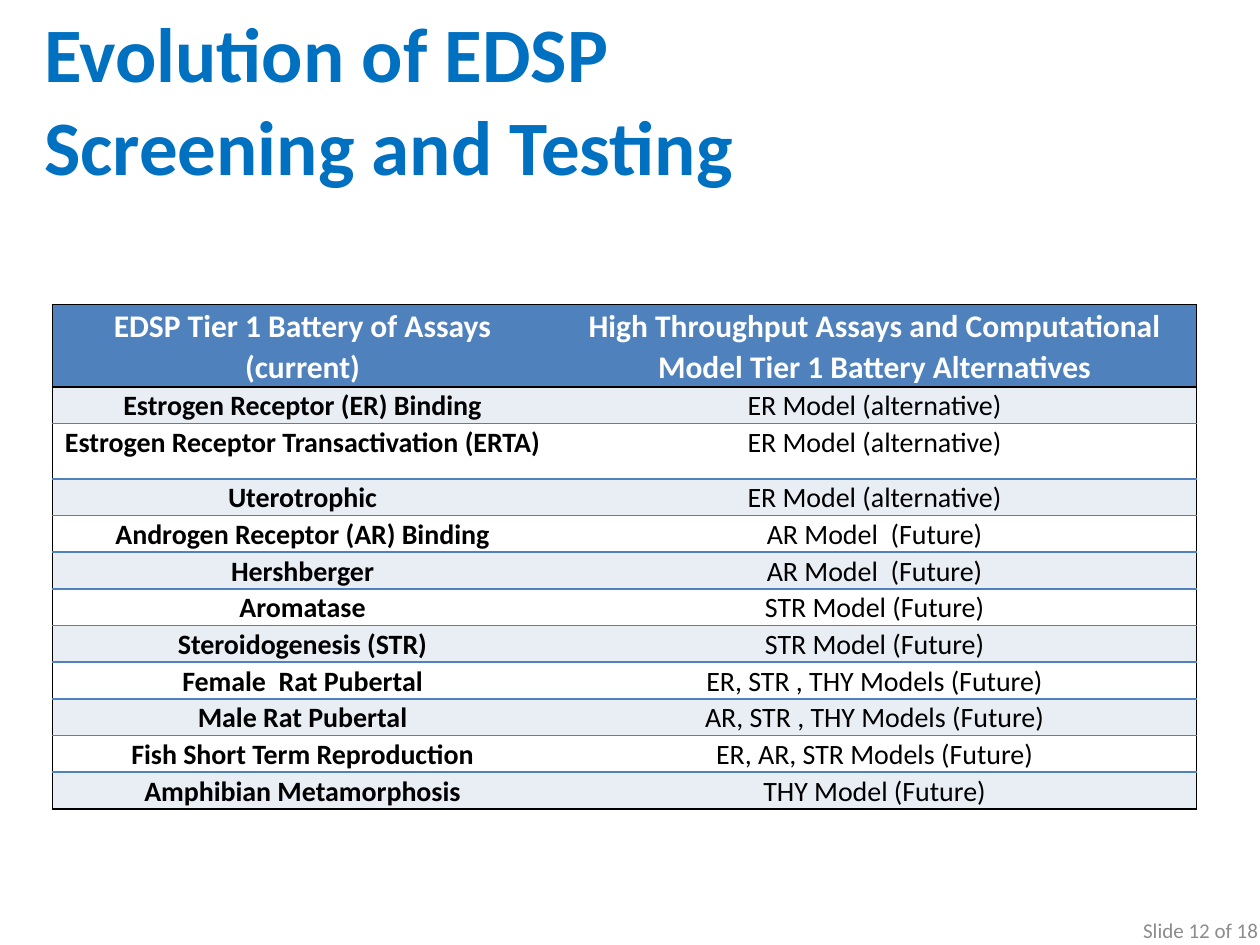
from lxml.etree import SubElement
from pptx import Presentation
from pptx.dml.color import RGBColor
from pptx.enum.text import MSO_ANCHOR, MSO_AUTO_SIZE, PP_ALIGN
from pptx.oxml.ns import qn
from pptx.util import Pt

TITLE = "Evolution of EDSP Screening and Testing"
PAGE_LABEL = "Slide 12 of 18"
HEADER = (
    "EDSP Tier 1 Battery of Assays\n(current)",
    "High Throughput Assays and Computational\nModel Tier 1 Battery Alternatives",
)
ASSAYS = [
    ("Estrogen Receptor (ER) Binding", "ER Model (alternative)"),
    ("Estrogen Receptor Transactivation (ERTA)", "ER Model (alternative)"),
    ("Uterotrophic", "ER Model (alternative)"),
    ("Androgen Receptor (AR) Binding", "AR Model  (Future)"),
    ("Hershberger", "AR Model  (Future)"),
    ("Aromatase", "STR Model (Future)"),
    ("Steroidogenesis (STR)", "STR Model (Future)"),
    ("Female  Rat Pubertal", "ER, STR , THY Models (Future)"),
    ("Male Rat Pubertal", "AR, STR , THY Models (Future)"),
    ("Fish Short Term Reproduction", "ER, AR, STR Models (Future)"),
    ("Amphibian Metamorphosis", "THY Model (Future)"),
]
COLORS = {
    "title": "0070C0", "label": "8C8C8C", "header": "4F81BD", "rule": "4F81BD",
    "band": "E9EDF4", "white": "FFFFFF", "black": "000000",
}
COLUMN_WIDTHS = (285.84, 367.92)
HEADER_HEIGHT, ROW_HEIGHT, TALL_HEIGHT, TALL_ROW = 44.64, 20.16, 31.68, 2


def set_attributes(target, values):
    for name, value in values.items():
        setattr(target, name, value)


def format_paragraph(paragraph, size, color, bold, alignment, spacing=1.0):
    set_attributes(paragraph, {"alignment": alignment, "line_spacing": spacing})
    set_attributes(paragraph.font, {"size": Pt(size), "bold": bold, "name": "Calibri"})
    paragraph.font.color.rgb = RGBColor.from_string(COLORS[color])


def place(shape, left, top, width, height):
    bounds = {"left": left, "top": top, "width": width, "height": height}
    set_attributes(shape, {name: Pt(value) for name, value in bounds.items()})
    set_attributes(shape.text_frame, {
        "word_wrap": True,
        "auto_size": MSO_AUTO_SIZE.NONE,
        "vertical_anchor": MSO_ANCHOR.MIDDLE,
    })


def set_borders(cell, borders):
    properties = cell._tc.get_or_add_tcPr()
    for side, color in borders.items():
        line = SubElement(properties, qn(f"a:ln{side}"), w=str(Pt(1)))
        if color is None:
            SubElement(line, qn("a:noFill"))
        else:
            fill = SubElement(line, qn("a:solidFill"))
            SubElement(fill, qn("a:srgbClr"), val=COLORS[color])


def fill_cell(cell, text, row, column, last_row):
    is_header = row == 0
    set_borders(cell, {
        "L": "black" if column == 0 else None,
        "R": "black" if column == 1 else None,
        "T": "black" if row <= 1 else "rule",
        "B": "black" if row in (0, last_row) else "rule",
    })
    set_attributes(cell, {
        "text": text,
        "margin_left": Pt(5), "margin_right": Pt(5),
        "margin_top": 0, "margin_bottom": 0,
        "vertical_anchor": MSO_ANCHOR.TOP,
    })
    background = "header" if is_header else "band" if row % 2 else "white"
    cell.fill.solid()
    cell.fill.fore_color.rgb = RGBColor.from_string(COLORS[background])
    for paragraph in cell.text_frame.paragraphs:
        format_paragraph(
            paragraph, 18 if is_header else 16, "white" if is_header else "black",
            is_header or column == 0, PP_ALIGN.CENTER, 1.07,
        )


def add_assay_table(slide):
    rows = [HEADER] + ASSAYS
    heights = [HEADER_HEIGHT] + [ROW_HEIGHT] * len(ASSAYS)
    heights[TALL_ROW] = TALL_HEIGHT
    table = slide.shapes.add_table(
        len(rows), len(HEADER), Pt(30), Pt(174), Pt(sum(COLUMN_WIDTHS)), Pt(sum(heights))
    ).table
    for column, width in zip(table.columns, COLUMN_WIDTHS):
        column.width = Pt(width)
    for row, (texts, height) in enumerate(zip(rows, heights)):
        table.rows[row].height = Pt(height)
        for column, text in enumerate(texts):
            fill_cell(table.cell(row, column), text, row, column, len(rows) - 1)


def main():
    presentation = Presentation()
    set_attributes(presentation, {"slide_width": Pt(720), "slide_height": Pt(540)})
    slide = presentation.slides.add_slide(presentation.slide_layouts[5])

    title = slide.shapes.title
    title.text = TITLE
    place(title, 18, 36, 491.76, 40.32)
    format_paragraph(title.text_frame.paragraphs[0], 44, "title", True, PP_ALIGN.LEFT)

    label = slide.shapes.add_textbox(0, 0, 0, 0)
    label.text_frame.text = PAGE_LABEL
    place(label, 552.24, 516.96, 167.76, 28.8)
    label.text_frame.margin_right = Pt(1)
    format_paragraph(label.text_frame.paragraphs[0], 12, "label", False, PP_ALIGN.RIGHT)

    add_assay_table(slide)
    presentation.save("out.pptx")


if __name__ == "__main__":
    main()
